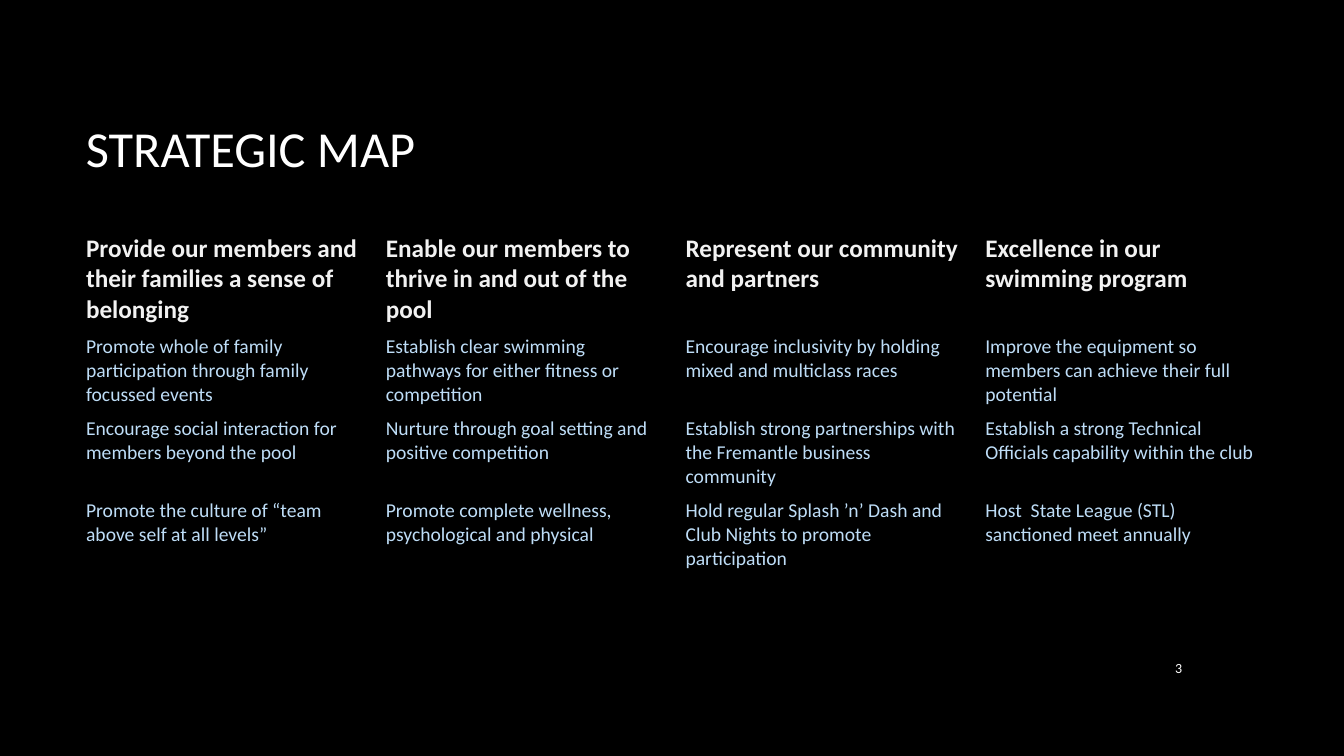
from pptx import Presentation
from pptx.dml.color import RGBColor
from pptx.enum.text import MSO_ANCHOR as Anchor, PP_ALIGN as Align
from pptx.util import Pt

SCALE = 914400 / 100.8
PLAIN = "{2D5ABB26-0587-4C30-8999-92F81FD0307C}"

GOALS = [
    ("Provide our members and their families a sense of belonging",
     "Promote whole of family participation through family focussed events",
     "Encourage social interaction for members beyond the pool",
     "Promote the culture of “team above self at all levels”"),
    ("Enable our members to thrive in and out of the pool",
     "Establish clear swimming pathways for either fitness or competition",
     "Nurture through goal setting and positive competition",
     "Promote complete wellness, psychological and physical"),
    ("Represent our community and partners",
     "Encourage inclusivity by holding mixed and multiclass races",
     "Establish strong partnerships with the Fremantle business community",
     "Hold regular Splash ’n’ Dash and Club Nights to promote participation"),
    ("Excellence in our swimming program",
     "Improve the equipment so members can achieve their full potential",
     "Establish a strong Technical Officials capability within the club",
     "Host  State League (STL) sanctioned meet annually"),
]


def px(num):
    return round(num * SCALE)


def paint(color, tone):
    color.rgb = RGBColor.from_string(tone)


def write(frame, text, size=14, tone="FFFFFF", bold=False, align=Align.LEFT, face="Calibri"):
    frame.word_wrap = True
    para = frame.paragraphs[0]
    para.alignment = align
    run = para.add_run()
    run.text = text
    font = run.font
    font.name, font.size, font.bold = face, Pt(size), bold
    paint(font.color, tone)


class Board:
    back = "000000"
    head = {"size": 18, "tone": "F2F2F2", "bold": True}
    body = {"size": 14, "tone": "BEDDF7"}

    def __init__(self, deck):
        self.slide = deck.slides.add_slide(deck.slide_layouts[6])
        fill = self.slide.background.fill
        fill.solid()
        paint(fill.fore_color, self.back)

    def label(self, text, left, top, width, height, **style):
        box = self.slide.shapes.add_textbox(px(left), px(top), px(width), px(height))
        box.text_frame.vertical_anchor = Anchor.MIDDLE
        write(box.text_frame, text, **style)

    def table(self, cols, left, top, width, tall, low):
        count = len(cols[0])
        high = tall + low * (count - 1)
        shape = self.slide.shapes.add_table(count, len(cols), px(left), px(top), px(width), px(high))
        grid = shape.table
        grid.first_row = grid.horz_banding = False
        shape._element.xpath(".//a:tableStyleId")[0].text = PLAIN
        for row in range(count):
            grid.rows[row].height = px(low if row else tall)
            for col, texts in enumerate(cols):
                cell = grid.cell(row, col)
                cell.fill.background()
                write(cell.text_frame, texts[row], **(self.body if row else self.head))


def main():
    deck = Presentation()
    deck.slide_width, deck.slide_height = px(1344), px(756)
    board = Board(deck)
    board.label("STRATEGIC MAP", 76, 67, 1117, 160, size=36)
    board.table(GOALS, 76, 228, 1199, 102, 82)
    board.label("3", 1132, 647, 60, 41, size=10, align=Align.RIGHT)
    deck.save("out.pptx")


if __name__ == "__main__":
    main()
